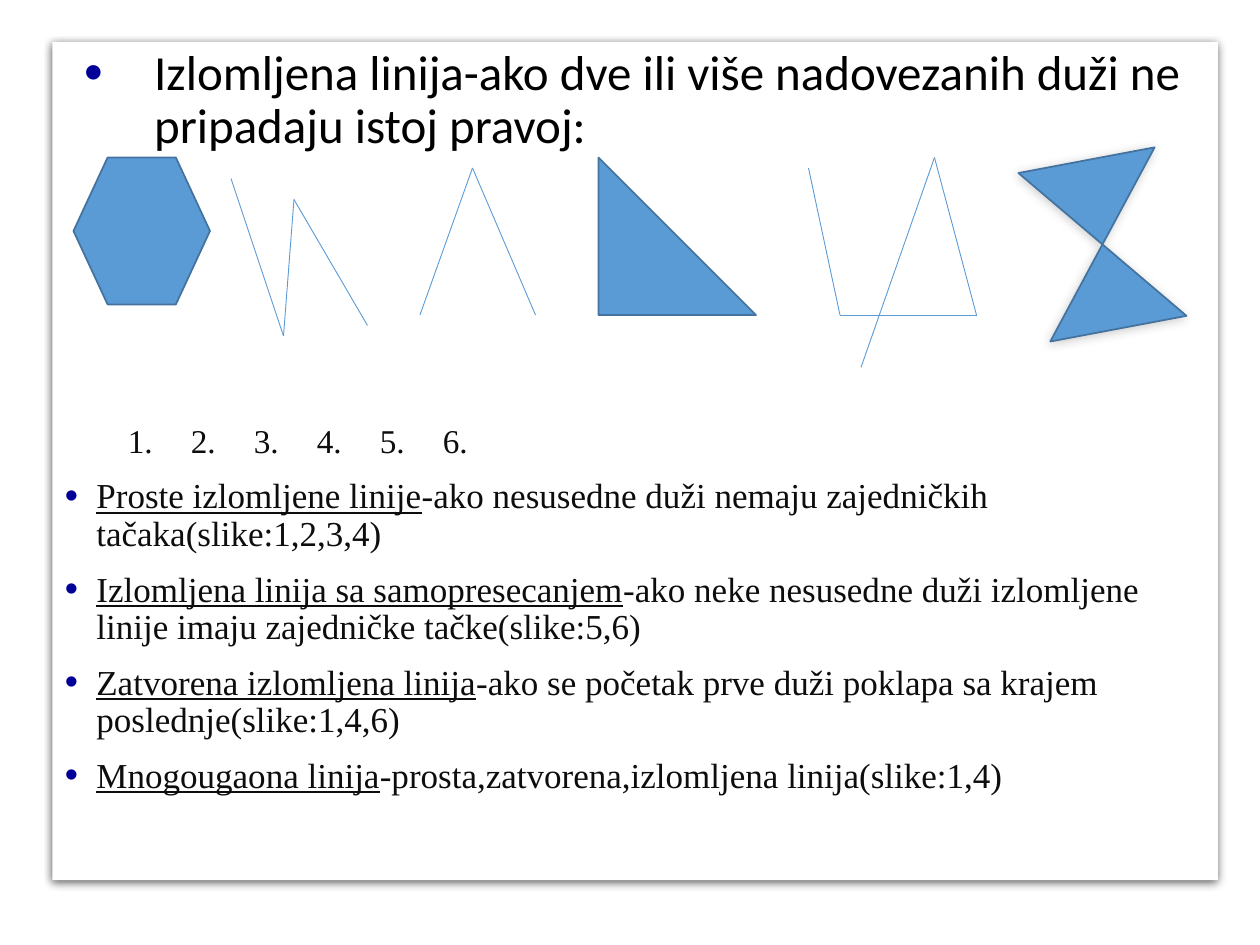
from itertools import pairwise

from lxml import etree
from pptx import Presentation
from pptx import util as u
from pptx.dml.color import RGBColor
from pptx.enum import shapes, text
from pptx.oxml import ns

WHITE = RGBColor(0xFF, 0xFF, 0xFF)
BLACK = RGBColor(0, 0, 0)
INK = RGBColor(0x0D, 0x0D, 0x0D)
BLUE = RGBColor(0x5B, 0x9B, 0xD5)
OUTLINE = RGBColor(0x43, 0x73, 0x9E)
BULLET = RGBColor(0, 0, 0x99)
SERIF = "Times New Roman"

TITLE = "Izlomljena linija-ako dve ili više nadovezanih duži ne pripadaju istoj pravoj:"
DEFINITIONS = [
    ("Proste izlomljene linije",
     "-ako nesusedne duži nemaju zajedničkih tačaka(slike:1,2,3,4)"),
    ("Izlomljena linija sa samopresecanjem",
     "-ako neke nesusedne duži izlomljene linije imaju zajedničke tačke(slike:5,6)"),
    ("Zatvorena izlomljena linija",
     "-ako se početak prve duži poklapa sa krajem poslednje(slike:1,4,6)"),
    ("Mnogougaona linija",
     "-prosta,zatvorena,izlomljena linija(slike:1,4)"),
]
LABEL_STOPS = [27, 108, 184, 269, 387, 477]

# Corner points of the open broken lines
BROKEN_LINES = [
    [(132, 102), (162, 192), (168, 114), (210, 186)],
    [(240, 180), (270, 96), (306, 180)],
    [(462, 96), (480, 180), (558, 180), (534, 90), (492, 210)],
]


def add_child(parent, tag, **attributes):
    values = {name: str(value) for name, value in attributes.items()}
    return etree.SubElement(parent, ns.qn(tag), values)


def add_shadow(shape, alpha, blur, distance, angle):
    shape.shadow.inherit = False
    effects = shape._element.spPr.find(ns.qn("a:effectLst"))
    shadow = add_child(effects, "a:outerShdw", blurRad=u.Pt(blur), dist=u.Pt(distance),
                       dir=angle * 60000, algn="ctr", rotWithShape=0)
    color = add_child(shadow, "a:srgbClr", val=BLACK)
    add_child(color, "a:alpha", val=alpha * 1000)


def add_figure(slide, kind, left, top, width, height, fill=BLUE, outline=OUTLINE):
    shape = slide.shapes.add_shape(kind, u.Pt(left), u.Pt(top), u.Pt(width), u.Pt(height))
    shape.shadow.inherit = False
    shape.fill.solid()
    shape.fill.fore_color.rgb = fill
    if outline is None:
        shape.line.fill.background()
    else:
        shape.line.color.rgb = outline
        shape.line.width = u.Pt(1)
    return shape


def add_broken_line(slide, points):
    for (x1, y1), (x2, y2) in pairwise(points):
        line = slide.shapes.add_connector(
            shapes.MSO_CONNECTOR.STRAIGHT, u.Pt(x1), u.Pt(y1), u.Pt(x2), u.Pt(y2))
        line.line.color.rgb = BLUE
        line.line.width = u.Pt(0.5)
        add_child(line._element.spPr, "a:effectLst")


def format_paragraph(paragraph, before=10, margin=0, hanging=0):
    paragraph.alignment = text.PP_ALIGN.LEFT
    paragraph.line_spacing = 0.9
    paragraph.space_before = u.Pt(before)
    properties = paragraph._p.get_or_add_pPr()
    properties.set("marL", str(u.Pt(margin)))
    properties.set("indent", str(-u.Pt(hanging)))
    return properties


def add_bullet(properties, percent):
    color = add_child(properties, "a:buClr")
    add_child(color, "a:srgbClr", val=BULLET)
    add_child(properties, "a:buSzPct", val=percent * 1000)
    add_child(properties, "a:buFont", typeface="Arial")
    add_child(properties, "a:buChar", char="•")


def add_run(paragraph, words, size, font=SERIF, color=INK, underline=False):
    run = paragraph.add_run()
    run.text = words
    run.font.size = u.Pt(size)
    run.font.name = font
    run.font.color.rgb = color
    run.font.underline = underline


def write_text(frame):
    frame.word_wrap = True
    frame.vertical_anchor = text.MSO_ANCHOR.TOP

    # Heading
    heading = frame.paragraphs[0]
    add_bullet(format_paragraph(heading, margin=51, hanging=40), 109)
    add_run(heading, TITLE, 28, "Calibri", BLACK)

    # Figure numbers on tab stops, below the room for the drawings
    labels = frame.add_paragraph()
    tabs = add_child(format_paragraph(labels, before=155), "a:tabLst")
    for number, stop in enumerate(LABEL_STOPS, 1):
        add_child(tabs, "a:tab", pos=u.Pt(stop), algn="l")
        add_run(labels, f"\t{number}.", 19)

    # Definitions
    for term, meaning in DEFINITIONS:
        paragraph = frame.add_paragraph()
        add_bullet(format_paragraph(paragraph, margin=18, hanging=18), 108)
        add_run(paragraph, term, 20, underline=True)
        add_run(paragraph, meaning, 20)


def main():
    presentation = Presentation()
    presentation.slide_width, presentation.slide_height = u.Pt(720), u.Pt(540)
    slide = presentation.slides.add_slide(presentation.slide_layouts[6])
    kinds = shapes.MSO_SHAPE

    # Panel with the text
    panel = add_figure(slide, kinds.RECTANGLE, 30, 24, 666, 479, WHITE, None)
    add_shadow(panel, 63, 4.5, 1.5, 90)
    write_text(panel.text_frame)

    # Drawings
    add_figure(slide, kinds.HEXAGON, 42, 90, 78, 84)
    add_figure(slide, kinds.RIGHT_TRIANGLE, 342, 90, 90, 90)
    for points in BROKEN_LINES:
        add_broken_line(slide, points)
    hourglass = add_figure(slide, kinds.FLOWCHART_COLLATE, 590.4, 90.7, 79.2, 98)
    hourglass.rotation = 349.3
    add_shadow(hourglass, 20, 6, 1, 135)

    presentation.save("out.pptx")


if __name__ == "__main__":
    main()
